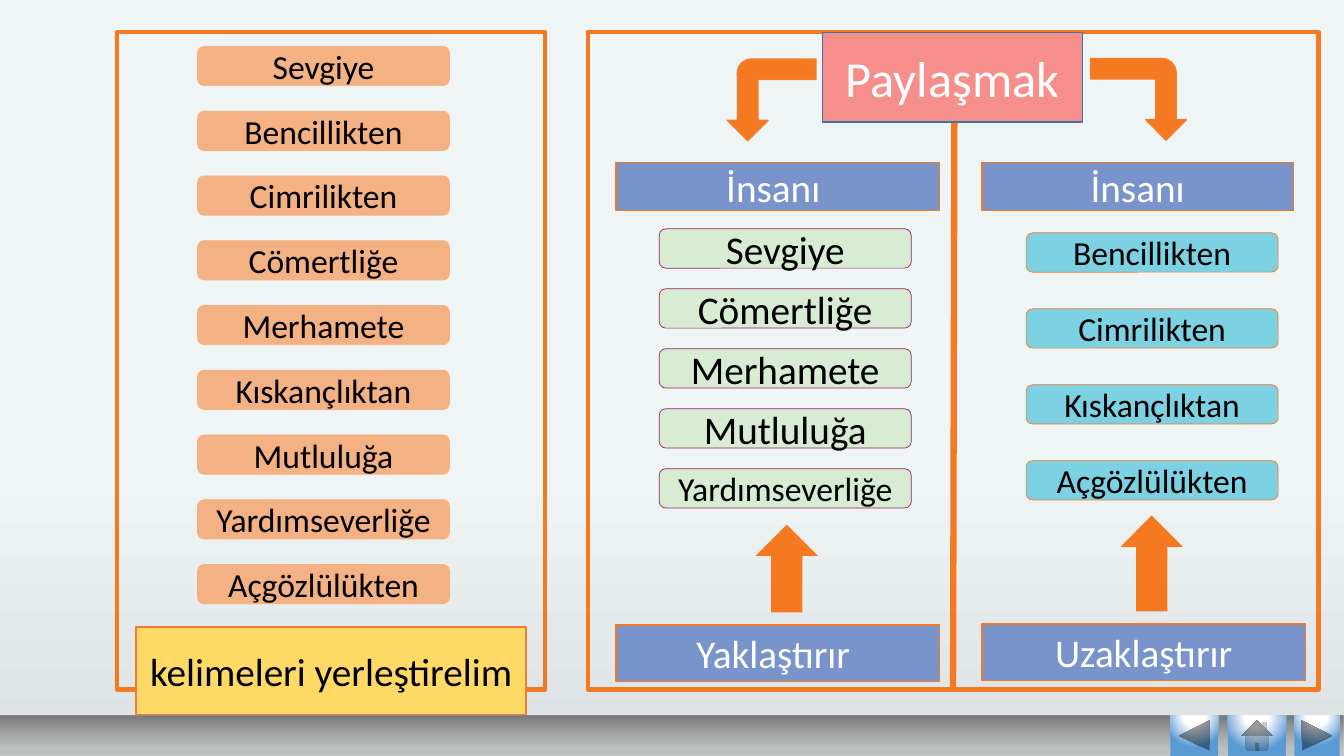
from collections import namedtuple

from lxml.etree import SubElement
from pptx import Presentation
from pptx.dml.color import RGBColor
from pptx.enum.shapes import MSO_CONNECTOR, MSO_SHAPE as Preset
from pptx.enum.text import MSO_ANCHOR, PP_ALIGN
from pptx.oxml.ns import qn
from pptx.util import Inches, Pt

CELL = Inches(0.1)
COLUMNS, ROWS = 133.33, 75
FONT = "Calibri"

WHITE = RGBColor(0xFF, 0xFF, 0xFF)
BLACK = RGBColor(0x00, 0x00, 0x00)
ORANGE = RGBColor(0xF5, 0x79, 0x21)
ARROW_EDGE = RGBColor(0xF4, 0x7C, 0x2E)
PEACH = RGBColor(0xF4, 0xB1, 0x83)
GREEN = RGBColor(0xD8, 0xEC, 0xD3)
PLUM = RGBColor(0x9C, 0x20, 0x68)
AQUA = RGBColor(0x7C, 0xD2, 0xE3)
BLUE = RGBColor(0x79, 0x93, 0xCB)
PINK = RGBColor(0xF6, 0x8F, 0x8B)
NAVY = RGBColor(0x43, 0x73, 0x9E)
YELLOW = RGBColor(0xFF, 0xD9, 0x66)
AMBER = RGBColor(0xED, 0x7D, 0x31)
SKY = RGBColor(0x5B, 0x9B, 0xD5)
PALE = RGBColor(0xEF, 0xF4, 0xF5)
MIST = RGBColor(0xDC, 0xE1, 0xE4)
SILVER = RGBColor(0xC0, 0xC0, 0xC0)
GRAY = RGBColor(0xB3, 0xB3, 0xB3)
DARK_GRAY = RGBColor(0x77, 0x77, 0x77)

Box = namedtuple("Box", "left top width height")
Style = namedtuple("Style", "fill line weight size color", defaults=(28, BLACK))

FRAME = Style(None, ORANGE, 3)
BAR = Style(BLUE, ORANGE, 1, 28, WHITE)
TITLE = Style(PINK, NAVY, 1, 36, WHITE)
CAPTION = Style(YELLOW, AMBER, 1)
PLAIN_ARROW = Style(ORANGE, None, 0)
BENT_ARROW = Style(ORANGE, ARROW_EDGE, 1)
BARE = Style(None, None, 0)
SOURCE_WORD = Style(PEACH, PEACH, 0.5, 24)
NEAR_WORD = Style(GREEN, PLUM, 0.5)
FAR_WORD = Style(AQUA, ORANGE, 0.5, 24)


def inside(box, left, top, width, height):
    return Box(box.left + left, box.top + top, width, height)


def add_block(slide, preset, box, style, text=""):
    shape = slide.shapes.add_shape(preset, *[round(length * CELL) for length in box])
    shape.shadow.inherit = False
    for part, color in ((shape.fill, style.fill), (shape.line.fill, style.line)):
        if color is None:
            part.background()
        else:
            part.solid()
            part.fore_color.rgb = color
    if style.line is not None:
        shape.line.width = Pt(style.weight)
    if text:
        frame = shape.text_frame
        frame.word_wrap = True
        frame.vertical_anchor = MSO_ANCHOR.MIDDLE
        paragraph = frame.paragraphs[0]
        paragraph.text = text
        paragraph.alignment = PP_ALIGN.CENTER
        for name, value in {"name": FONT, "size": Pt(style.size)}.items():
            setattr(paragraph.font, name, value)
        paragraph.font.color.rgb = style.color
    return shape


def add_gradient(shape, stops, angle=None):
    properties = shape.fill._xPr
    properties.remove(properties.find(qn("a:noFill")))
    gradient = SubElement(properties, qn("a:gradFill"), rotWithShape="1")
    properties.find(qn("a:prstGeom")).addnext(gradient)
    stop_list = SubElement(gradient, qn("a:gsLst"))
    for position, color, opacity in stops:
        stop = SubElement(stop_list, qn("a:gs"), pos=str(position * 1000))
        tint = SubElement(stop, qn("a:srgbClr"), val=str(color))
        if opacity < 100:
            SubElement(tint, qn("a:alpha"), val=str(opacity * 1000))
    if angle is None:
        circle = SubElement(gradient, qn("a:path"), path="circle")
        SubElement(circle, qn("a:fillToRect"), l="50000", t="-80000", r="50000", b="180000")
    else:
        SubElement(gradient, qn("a:lin"), ang=str(angle * 60000), scaled="0")


def add_words(slide, box, words, style, sizes=None):
    height = 3.9
    step = (box.height - height) / (len(words) - 1)
    for index, word in enumerate(words):
        size = (sizes or {}).get(word, style.size)
        add_block(slide, Preset.ROUNDED_RECTANGLE,
                  inside(box, 0, index * step, box.width, height),
                  style._replace(size=size), word)


def add_backdrop(slide, box):
    backdrop = add_block(slide, Preset.RECTANGLE, box, BARE)
    add_gradient(backdrop, [(62, PALE, 100), (100, MIST, 100)], 90)


def add_word_bank(slide, box):
    add_block(slide, Preset.RECTANGLE, box, FRAME)
    add_words(slide, inside(box, 8, 1.4, 25, 55.3),
              ["Sevgiye", "Bencillikten", "Cimrilikten", "Cömertliğe", "Merhamete",
               "Kıskançlıktan", "Mutluluğa", "Yardımseverliğe", "Açgözlülükten"],
              SOURCE_WORD)
    add_block(slide, Preset.RECTANGLE, inside(box, 1.9, 59, 38.7, 8.7), CAPTION,
              "kelimeleri yerleştirelim")


def add_up_arrow(slide, box):
    arrow = add_block(slide, Preset.RIGHT_ARROW, box, PLAIN_ARROW)
    arrow.rotation = 270


def add_near_column(slide, box):
    add_block(slide, Preset.RECTANGLE, inside(box, 0, 0, 32.1, 4.8), BAR, "İnsanı ")
    add_words(slide, inside(box, 4.3, 6.6, 25, 27.7),
              ["Sevgiye", "Cömertliğe", "Merhamete", "Mutluluğa", "Yardımseverliğe"],
              NEAR_WORD, {"Yardımseverliğe": 24})
    add_up_arrow(slide, inside(box, 12.6, 37.2, 8.7, 6.2))
    add_block(slide, Preset.RECTANGLE, inside(box, 0, 45.9, 32.1, 5.6), BAR, "Yaklaştırır ")


def add_far_column(slide, box):
    add_block(slide, Preset.RECTANGLE, inside(box, 0, 0, 30.9, 4.8), BAR, "İnsanı")
    add_words(slide, inside(box, 4.4, 7, 25, 26.5),
              ["Bencillikten", "Cimrilikten", "Kıskançlıktan", "Açgözlülükten"], FAR_WORD)
    add_up_arrow(slide, inside(box, 12.1, 36.7, 9.5, 6.2))
    add_block(slide, Preset.RECTANGLE, inside(box, 0, 45.8, 32.1, 5.6), BAR, "Uzaklaştırır")


def add_bent_arrow(slide, box, bend, flipped):
    arrow = add_block(slide, Preset.BENT_ARROW, box, BENT_ARROW)
    for index, value in enumerate((0.25, 0.25, 0.25, bend)):
        arrow.adjustments[index] = value
    arrow.rotation = 90
    if flipped:
        arrow.element.spPr.find(qn("a:xfrm")).set("flipV", "1")


def add_sorting_board(slide, box):
    board = add_block(slide, Preset.RECTANGLE, box, FRAME)
    start_x, start_y = round((box.left + 36.4) * CELL), round(box.top * CELL)
    divider = slide.shapes.add_connector(MSO_CONNECTOR.STRAIGHT, start_x, start_y,
                                         start_x, start_y)
    divider.end_connect(board, 2)
    divider.line.color.rgb = ORANGE
    divider.line.width = Pt(4.5)
    SubElement(divider.element.spPr, qn("a:effectLst"))
    add_near_column(slide, inside(box, 2.8, 12.9, 32.1, 51.5))
    add_far_column(slide, inside(box, 39.1, 12.9, 32.1, 51.5))
    add_block(slide, Preset.RECTANGLE, inside(box, 23.3, 0, 25.8, 8.9), TITLE, "Paylaşmak")
    add_bent_arrow(slide, inside(box, 50.6, 1.9, 8.1, 9.5), 0.18, False)
    add_bent_arrow(slide, inside(box, 14.2, 2.3, 8.1, 8.8), 0.17, True)


def add_navigation(slide, box):
    strip = add_block(slide, Preset.RECTANGLE, box, BARE)
    add_gradient(strip, [(0, SILVER, 100), (17, GRAY, 70), (100, DARK_GRAY, 100)], 270)
    for preset, left, width in (
        (Preset.ACTION_BUTTON_BACK_OR_PREVIOUS, 116.1, 4.8),
        (Preset.ACTION_BUTTON_HOME, 121.8, 5.8),
        (Preset.ACTION_BUTTON_FORWARD_OR_NEXT, 128.4, 4.5),
    ):
        button = add_block(slide, preset, inside(box, left, 0, width, 4), BARE)
        add_gradient(button, [(0, WHITE, 100), (35, WHITE, 100), (100, SKY, 100)])


def main():
    presentation = Presentation()
    presentation.slide_width = round(COLUMNS * CELL)
    presentation.slide_height = ROWS * CELL
    slide = presentation.slides.add_slide(presentation.slide_layouts[6])
    add_backdrop(slide, Box(0, 0, COLUMNS, ROWS))
    add_sorting_board(slide, Box(58.3, 3.2, 72.5, 65.2))
    add_navigation(slide, Box(0, 71, COLUMNS, 4))
    add_word_bank(slide, Box(11.6, 3.2, 42.5, 65.2))
    presentation.save("out.pptx")


if __name__ == "__main__":
    main()
